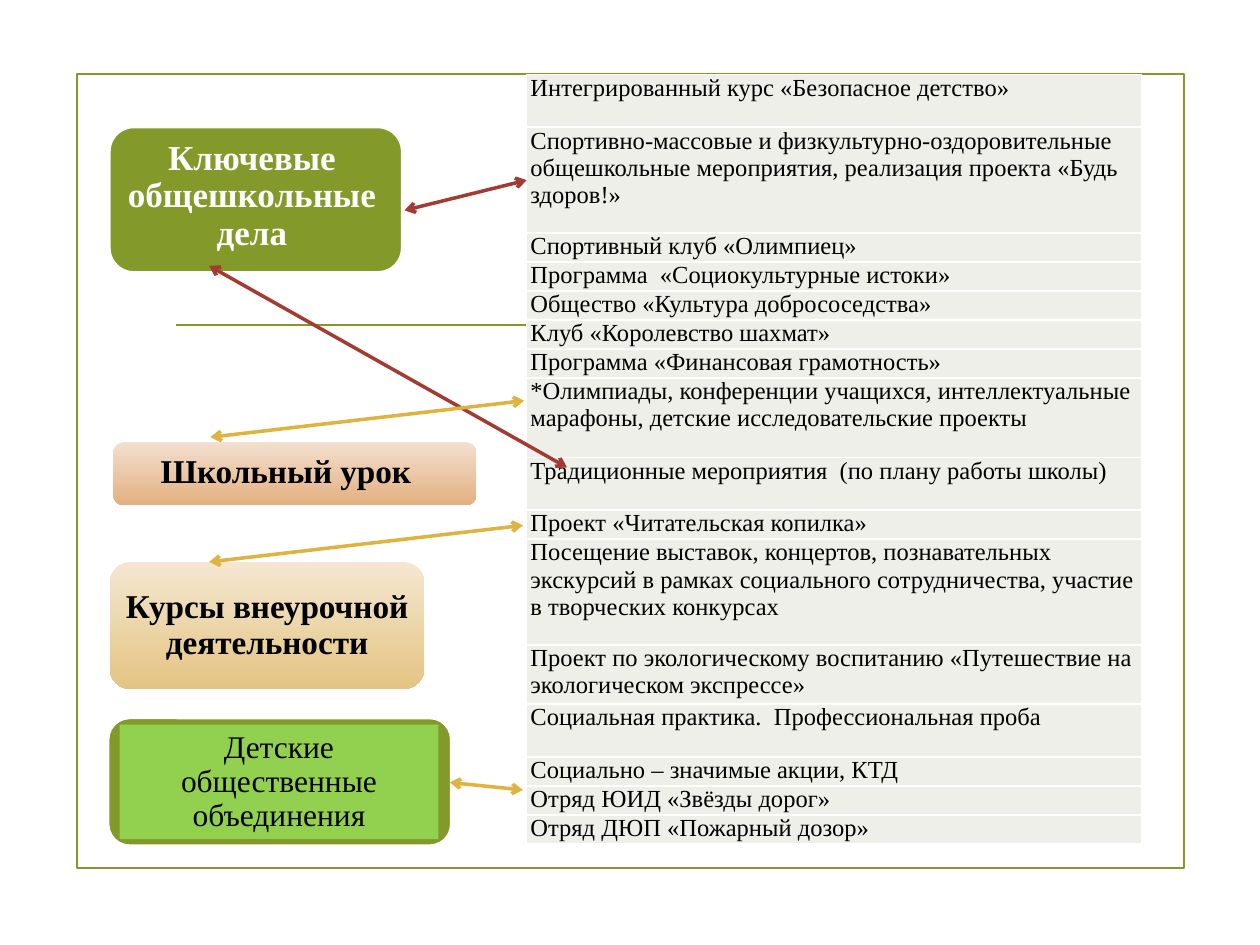
from dataclasses import dataclass

from lxml.etree import SubElement
from pptx import Presentation
from pptx.dml.color import RGBColor
from pptx.enum.shapes import MSO_CONNECTOR, MSO_SHAPE
from pptx.enum.text import MSO_ANCHOR, PP_ALIGN
from pptx.oxml.ns import qn
from pptx.util import Inches, Pt


@dataclass(frozen=True)
class Theme:
    font: str = "Times New Roman"
    olive: str = "83992A"
    lime: str = "92D050"
    red: str = "A23C33"
    gold: str = "DEB340"
    cell: str = "EDEFE8"
    white: str = "FFFFFF"
    black: str = "000000"
    sand: tuple = ("F4E7D1", "E4C482")
    peach: tuple = ("F3DFCF", "E3B07F")
    body: int = 14
    small: int = 18
    medium: int = 19
    large: int = 20
    thin: float = 1.25
    thick: float = 2


ROWS = [
    (0.42, "Интегрированный курс «Безопасное детство»"),
    (0.84, "Спортивно-массовые и физкультурно-оздоровительные общешкольные "
           "мероприятия, реализация проекта «Будь здоров!»"),
    (0.23, "Спортивный клуб «Олимпиец»"),
    (0.23, "Программа  «Социокультурные истоки»"),
    (0.23, "Общество «Культура добрососедства»"),
    (0.23, "Клуб «Королевство шахмат»"),
    (0.23, "Программа «Финансовая грамотность»"),
    (0.63, "*Олимпиады, конференции учащихся, интеллектуальные марафоны, "
           "детские исследовательские проекты"),
    (0.42, "Традиционные мероприятия  (по плану работы школы)"),
    (0.23, "Проект «Читательская копилка»"),
    (0.84, "Посещение выставок, концертов, познавательных экскурсий в рамках "
           "социального сотрудничества, участие в творческих конкурсах"),
    (0.47, "Проект по экологическому воспитанию «Путешествие на "
           "экологическом экспрессе»"),
    (0.42, "Социальная практика.  Профессиональная проба"),
    (0.23, "Социально – значимые акции, КТД"),
    (0.23, "Отряд ЮИД «Звёзды дорог»"),
    (0.23, "Отряд ДЮП «Пожарный дозор»"),
]


def color(code):
    return RGBColor.from_string(code)


class Painter:
    def __init__(self, slide, theme):
        self.slide = slide
        self.theme = theme

    def shape(self, kind, box, fill=None, line=None):
        """Draw a preset; fill is a colour, a top-to-bottom pair, or None."""
        item = self.slide.shapes.add_shape(kind, *map(Inches, box))
        item.shadow.inherit = False
        if fill is None:
            item.fill.background()
        elif isinstance(fill, tuple):
            item.fill.gradient()
            item.fill.gradient_angle = 270
            for stop, code in zip(item.fill.gradient_stops, fill):
                stop.color.rgb = color(code)
        else:
            item.fill.solid()
            item.fill.fore_color.rgb = color(fill)
        if line:
            item.line.color.rgb = color(line)
            item.line.width = Pt(self.theme.thin)
        else:
            item.line.fill.background()
        return item

    def run(self, para, text, size, code, bold=False):
        run = para.add_run()
        run.text = text
        font = run.font
        font.name, font.size, font.bold = self.theme.font, Pt(size), bold
        font.color.rgb = color(code)

    def caption(self, frame, text, size, code, bold=False, right=0.08):
        frame.word_wrap = True
        frame.vertical_anchor = MSO_ANCHOR.MIDDLE
        frame.margin_left = frame.margin_top = frame.margin_bottom = Inches(0.08)
        frame.margin_right = Inches(right)
        para = frame.paragraphs[0]
        para.alignment = PP_ALIGN.CENTER
        para.line_spacing = 0.9
        self.run(para, text, size, code, bold)

    def label(self, box, text, size, code, right=0.08):
        frame = self.slide.shapes.add_textbox(*map(Inches, box)).text_frame
        self.caption(frame, text, size, code, True, right)

    def line(self, start, end, code, width, arrows=False):
        item = self.slide.shapes.add_connector(
            MSO_CONNECTOR.STRAIGHT, *map(Inches, start + end))
        item.line.color.rgb = color(code)
        item.line.width = Pt(width)
        if arrows:
            for tag in ("a:headEnd", "a:tailEnd"):
                SubElement(item.line._get_or_add_ln(), qn(tag), type="arrow")
        SubElement(item._element.spPr, qn("a:effectLst"))

    def border(self, cell):
        props = cell._tc.get_or_add_tcPr()
        for side in "LRTB":
            edge = SubElement(props, qn(f"a:ln{side}"), w=str(Pt(1)))
            fill = SubElement(edge, qn("a:solidFill"))
            SubElement(fill, qn("a:srgbClr"), val=self.theme.white)

    def table(self, left, top, width, rows):
        height = sum(tall for tall, _ in rows)
        box = map(Inches, (left, top, width, height))
        table = self.slide.shapes.add_table(len(rows), 1, *box).table
        table.first_row = table.horz_banding = False
        for row, (tall, text) in zip(table.rows, rows):
            row.height = Inches(tall)
            cell = row.cells[0]
            cell.margin_left = cell.margin_right = Inches(0.03)
            cell.margin_top = cell.margin_bottom = 0
            self.border(cell)
            cell.fill.solid()
            cell.fill.fore_color.rgb = color(self.theme.cell)
            para = cell.text_frame.paragraphs[0]
            self.run(para, text, self.theme.body, self.theme.black)


def main():
    deck = Presentation()
    deck.slide_width, deck.slide_height = Inches(10), Inches(7.5)
    look = Theme()
    art = Painter(deck.slides.add_slide(deck.slide_layouts[6]), look)
    round_box = MSO_SHAPE.ROUNDED_RECTANGLE

    art.shape(MSO_SHAPE.RECTANGLE, (0.61, 0.59, 8.79, 6.3), line=look.olive)
    art.line((1.4, 2.58), (8.61, 2.58), look.olive, look.thin)
    art.table(4.18, 0.59, 4.88, ROWS)

    art.shape(round_box, (0.87, 4.46, 2.5, 1.01), look.sand)
    art.label((0.91, 4.51, 2.42, 0.91), "Курсы внеурочной деятельности",
              look.medium, look.black)

    art.shape(round_box, (0.87, 1.01, 2.32, 1.15), look.olive, look.white)
    art.label((0.92, 1.04, 2.16, 1.04), "Ключевые общешкольные дела",
              look.large, look.white)

    art.shape(round_box, (0.86, 5.7, 2.72, 1.01), look.olive, look.white)
    panel = art.shape(MSO_SHAPE.RECTANGLE, (0.95, 5.75, 2.53, 0.91), look.lime)
    art.caption(panel.text_frame, "Детские общественные объединения",
                look.small, look.black)

    art.shape(round_box, (0.9, 3.51, 2.88, 0.5), look.peach)
    art.label((0.93, 3.53, 2.83, 0.45), "Школьный урок",
              look.medium, look.black, right=0.23)

    for start, end, code in [
        ((1.66, 2.11), (4.5, 3.71), look.red),
        ((1.67, 3.47), (4.16, 3.18), look.gold),
        ((1.66, 4.46), (4.15, 4.17), look.gold),
        ((3.57, 6.21), (4.15, 6.27), look.gold),
        ((3.21, 1.67), (4.18, 1.43), look.red),
    ]:
        art.line(start, end, code, look.thick, arrows=True)

    deck.save("out.pptx")


if __name__ == "__main__":
    main()
